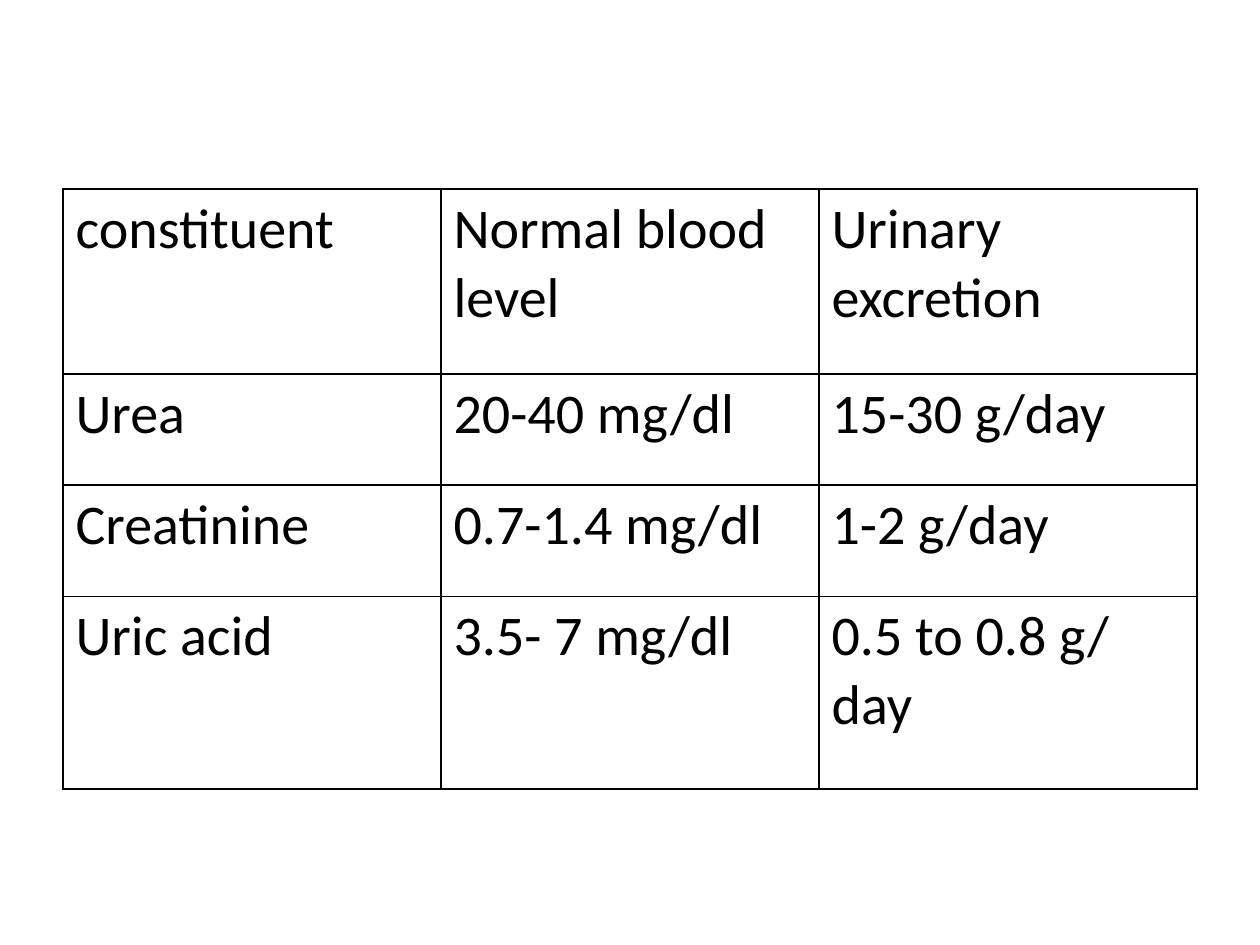
from lxml import etree
from pptx import Presentation
from pptx.dml.color import RGBColor
from pptx.oxml.ns import qn
from pptx.util import Cm, Pt

BLANK_LAYOUT = 6
FONT = "Calibri"
BLACK = "000000"
BORDER_SIDES = ("a:lnL", "a:lnR", "a:lnT", "a:lnB")

ROWS = [
    ("constituent", "Normal blood level", "Urinary excretion"),
    ("Urea", "20-40 mg/dl", "15-30 g/day"),
    ("Creatinine", "0.7-1.4 mg/dl", "1-2 g/day"),
    ("Uric acid", "3.5- 7 mg/dl", "0.5 to 0.8 g/ day"),
]
ROW_HEIGHTS = [Cm(3.73), Cm(2.24), Cm(2.24), Cm(3.89)]


def color(hex_string):
    return RGBColor.from_string(hex_string)


def write_text(text_frame, text, size=32, font=FONT, font_color=BLACK, bold=False):
    run = text_frame.paragraphs[0].add_run()
    run.text = text
    run.font.name = font
    run.font.size = Pt(size)
    run.font.bold = bold
    run.font.color.rgb = color(font_color)


def add_borders(cell, width=1, line_color=BLACK):
    properties = cell._tc.get_or_add_tcPr()
    for side in BORDER_SIDES:
        line = etree.SubElement(properties, qn(side), w=str(Pt(width)))
        fill = etree.SubElement(line, qn("a:solidFill"))
        etree.SubElement(fill, qn("a:srgbClr"), val=line_color)


def add_level_table(slide, left, top, width, rows, row_heights):
    column_count = len(rows[0])
    frame = slide.shapes.add_table(
        len(rows), column_count, left, top, width, sum(row_heights))
    table = frame.table
    table.first_row = False
    table.horz_banding = False

    # Equal columns
    for column in table.columns:
        column.width = width // column_count

    # Plain bordered cells
    for row_index, (texts, height) in enumerate(zip(rows, row_heights)):
        table.rows[row_index].height = height
        for column_index, text in enumerate(texts):
            cell = table.cell(row_index, column_index)
            add_borders(cell)
            cell.fill.background()
            write_text(cell.text_frame, text)


def main():
    presentation = Presentation()
    presentation.slide_width = Cm(25.4)
    presentation.slide_height = Cm(19.05)
    slide = presentation.slides.add_slide(presentation.slide_layouts[BLANK_LAYOUT])

    # Blood levels and urinary excretion
    add_level_table(slide, Cm(1.27), Cm(3.81), Cm(22.86), ROWS, ROW_HEIGHTS)

    presentation.save("out.pptx")


if __name__ == "__main__":
    main()
